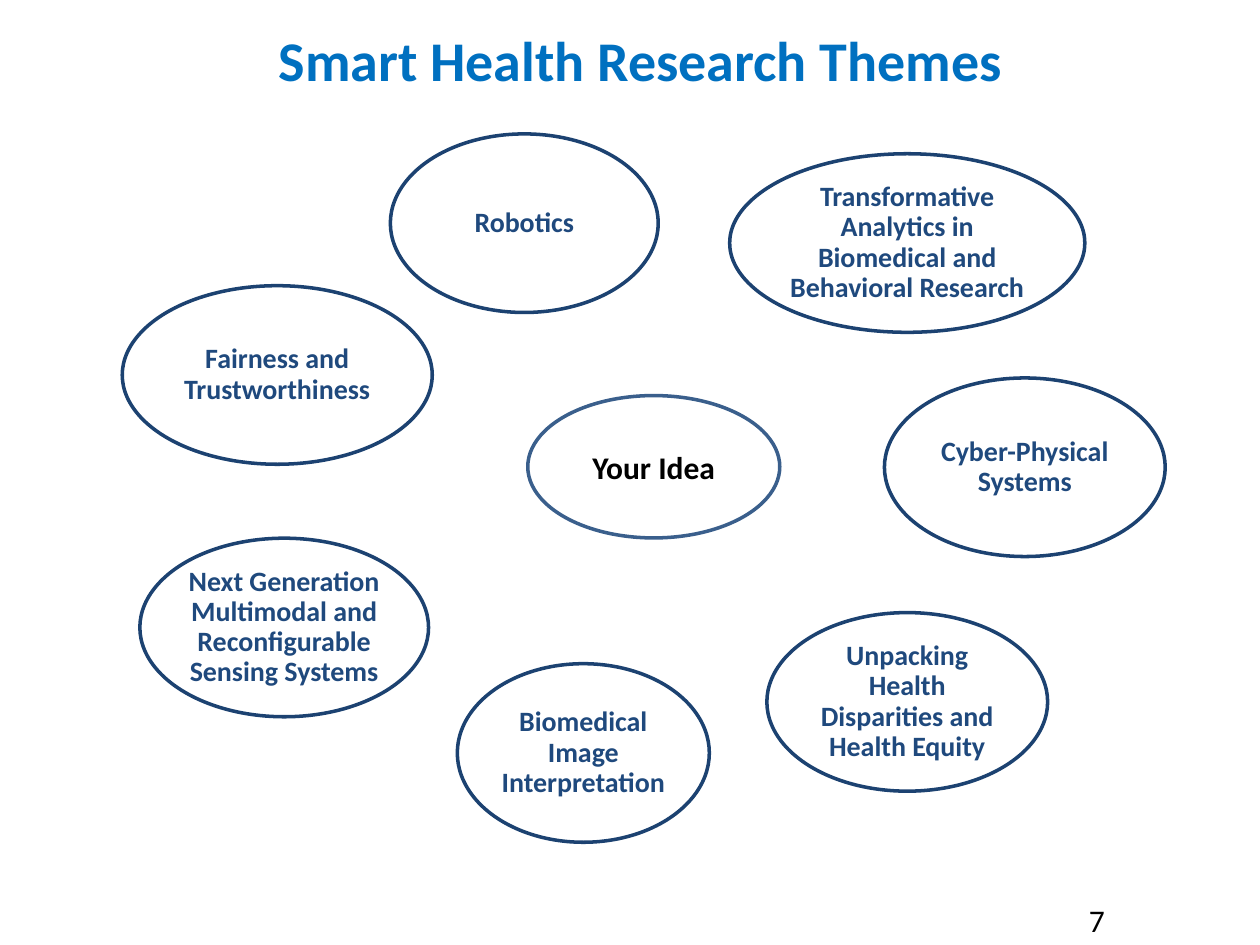
from dataclasses import dataclass

from pptx import Presentation
from pptx.dml.color import RGBColor
from pptx.enum.shapes import MSO_SHAPE
from pptx.enum.text import MSO_ANCHOR, PP_ALIGN
from pptx.slide import Slide
from pptx.text.text import TextFrame
from pptx.util import Cm, Pt

ELLIPSE = MSO_SHAPE.OVAL
MIDDLE = MSO_ANCHOR.MIDDLE
TOP = MSO_ANCHOR.TOP
CENTER = PP_ALIGN.CENTER
LEFT = PP_ALIGN.LEFT


@dataclass(frozen=True)
class Theme:
    font: str = "Calibri"
    title_color: RGBColor = RGBColor(0x00, 0x70, 0xC0)
    theme_color: RGBColor = RGBColor(0x1F, 0x49, 0x7D)
    theme_outline: RGBColor = RGBColor(0x1C, 0x42, 0x71)
    idea_outline: RGBColor = RGBColor(0x3A, 0x5F, 0x8C)
    black: RGBColor = RGBColor(0x00, 0x00, 0x00)
    white: RGBColor = RGBColor(0xFF, 0xFF, 0xFF)
    title_size: int = 32
    theme_size: int = 16
    body_size: int = 18
    outline_width: int = 2


@dataclass(frozen=True)
class Bubble:
    """An ellipse with its centre and size in centimetres."""
    label: str
    center_x: float
    center_y: float
    width: float
    height: float = 3.6
    filled: bool = True


THEME = Theme()

RESEARCH_THEMES = [
    Bubble("Robotics", 10.57, 4.5, 5.4),
    Bubble("Transformative Analytics in Biomedical and Behavioral Research", 18.29, 4.9, 7.16),
    Bubble("Cyber-Physical Systems", 20.66, 9.42, 5.66),
    Bubble("Biomedical Image Interpretation", 11.76, 15.18, 5.08),
    Bubble("Next Generation Multimodal and Reconfigurable Sensing Systems", 5.73, 12.65, 5.82),
    Bubble("Fairness and Trustworthiness", 5.59, 7.56, 6.25, filled=False),
    Bubble("Unpacking Health Disparities and Health Equity", 18.29, 14.15, 5.66),
]
YOUR_IDEA = Bubble("Your Idea", 13.18, 9.41, 5.08, 2.87, filled=False)


def write(frame: TextFrame, text: str, size: int, color: RGBColor, bold: bool = True,
          align: PP_ALIGN = CENTER, anchor: MSO_ANCHOR = MIDDLE,
          line_spacing: float = 1.0) -> None:
    frame.text = text
    frame.word_wrap = True
    frame.vertical_anchor = anchor
    paragraph = frame.paragraphs[0]
    paragraph.alignment = align
    paragraph.line_spacing = line_spacing
    for run in paragraph.runs:
        run.font.name = THEME.font
        run.font.size = Pt(size)
        run.font.bold = bold
        run.font.color.rgb = color


def set_insets(frame: TextFrame, left: float, top: float, right: float, bottom: float) -> None:
    frame.margin_left, frame.margin_top = Cm(left), Cm(top)
    frame.margin_right, frame.margin_bottom = Cm(right), Cm(bottom)


def draw_bubble(slide: Slide, bubble: Bubble, outline: RGBColor) -> TextFrame:
    """Draw the ellipse and return its text frame for the label."""
    ellipse = slide.shapes.add_shape(
        ELLIPSE,
        Cm(bubble.center_x - bubble.width / 2), Cm(bubble.center_y - bubble.height / 2),
        Cm(bubble.width), Cm(bubble.height))
    ellipse.shadow.inherit = False
    if bubble.filled:
        ellipse.fill.solid()
        ellipse.fill.fore_color.rgb = THEME.white
    else:
        ellipse.fill.background()
    ellipse.line.color.rgb = outline
    ellipse.line.width = Pt(THEME.outline_width)
    return ellipse.text_frame


def draw_title(slide: Slide) -> None:
    title = slide.shapes.add_textbox(Cm(2.34), Cm(0.46), Cm(21.16), Cm(1.4)).text_frame
    set_insets(title, 0, 0.06, 0, 0)
    write(title, "Smart Health Research Themes", THEME.title_size, THEME.title_color, anchor=TOP)


def draw_page_number(slide: Slide) -> None:
    number = slide.shapes.add_textbox(Cm(21.59), Cm(18.03), Cm(0.86), Cm(0.76)).text_frame
    set_insets(number, 0.36, 0.13, 0, 0.13)
    write(number, "7", THEME.body_size, THEME.black, bold=False, align=LEFT, anchor=TOP)


def main() -> None:
    presentation = Presentation()
    presentation.slide_width = Cm(25.4)
    presentation.slide_height = Cm(19.05)
    slide = presentation.slides.add_slide(presentation.slide_layouts[6])

    draw_title(slide)
    for bubble in RESEARCH_THEMES:
        label = draw_bubble(slide, bubble, THEME.theme_outline)
        set_insets(label, 0.05, 0.05, 0.05, 0.05)
        write(label, bubble.label, THEME.theme_size, THEME.theme_color, line_spacing=0.9)
    idea_label = draw_bubble(slide, YOUR_IDEA, THEME.idea_outline)
    write(idea_label, YOUR_IDEA.label, THEME.body_size, THEME.black)
    draw_page_number(slide)

    presentation.save("out.pptx")


if __name__ == "__main__":
    main()
